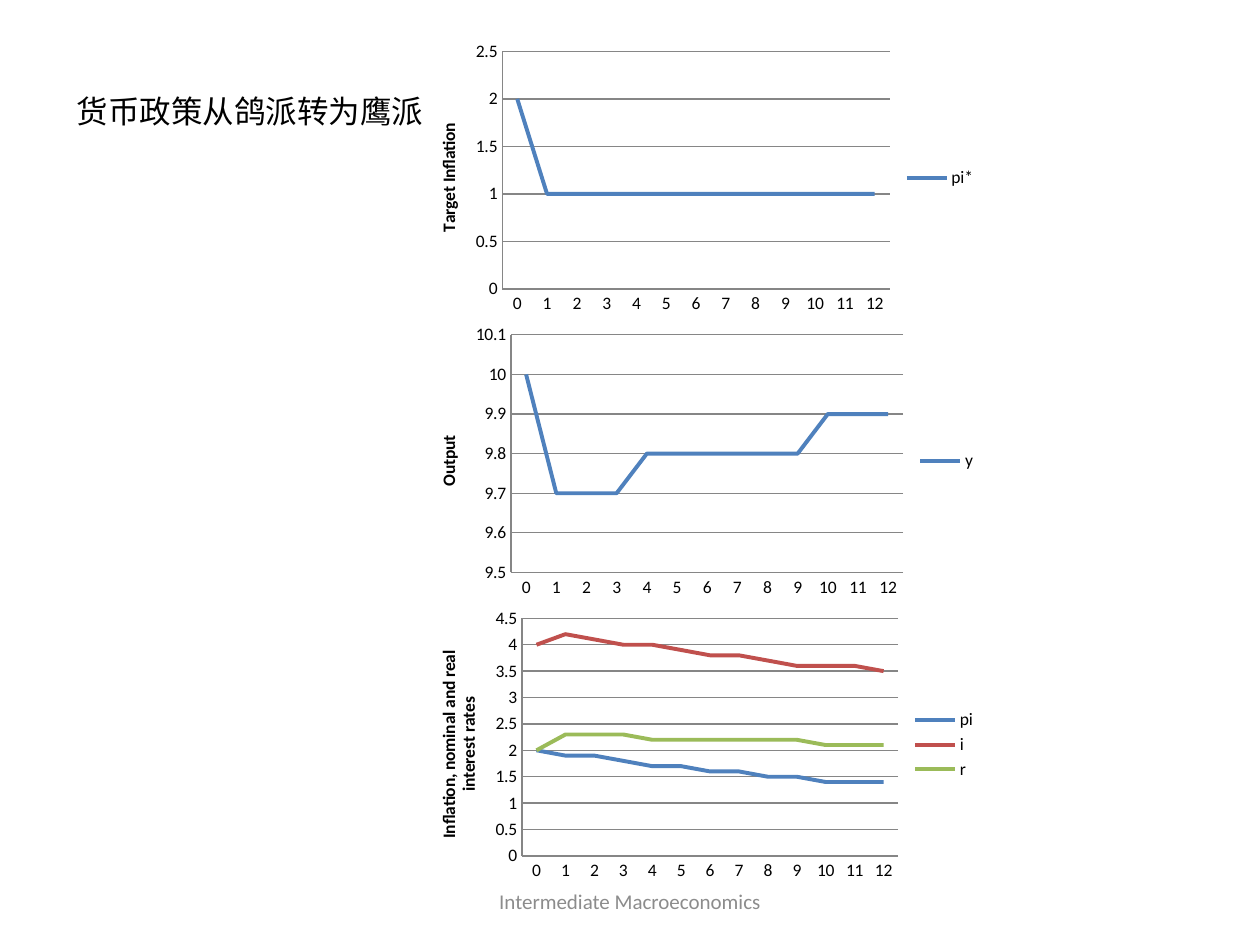
"""Build a slide of three line charts on a monetary policy turn."""
from dataclasses import dataclass

from pptx import Presentation
from pptx import util as u
from pptx.chart.data import CategoryChartData
from pptx.dml.color import RGBColor
from pptx.enum import chart as ch
from pptx.enum import text as tx
from pptx.slide import Slide


@dataclass(frozen=True)
class Theme:
    font: str = "Calibri"
    ink: str = "000000"
    muted: str = "8C8C8C"
    rule: str = "868686"
    blue: str = "4F81BD"
    red: str = "C0504D"
    green: str = "9BBB59"
    heading_size: float = 18
    footer_size: float = 12
    chart_size: float = 10
    curve_width: float = 2.25
    rule_width: float = 0.75


@dataclass(frozen=True)
class Curve:
    name: str
    color: str
    values: tuple[float, ...]


@dataclass(frozen=True)
class Panel:
    axis_title: str
    low: float
    high: float
    step: float
    curves: tuple[Curve, ...]


THEME = Theme()
PERIODS = range(13)
PANEL_LEFT, PANEL_TOP, PANEL_WIDTH, PANEL_HEIGHT = 235.25, 20.5, 330, 162

PANELS = (
    Panel("Target Inflation", 0, 2.5, 0.5, (
        Curve("pi*", THEME.blue, (2,) + (1,) * 12),
    )),
    Panel("Output", 9.5, 10.1, 0.1, (
        Curve("y", THEME.blue, (10, 9.7, 9.7, 9.7, 9.8, 9.8, 9.8,
                                9.8, 9.8, 9.8, 9.9, 9.9, 9.9)),
    )),
    Panel("Inflation, nominal and real interest rates", 0, 4.5, 0.5, (
        Curve("pi", THEME.blue, (2, 1.9, 1.9, 1.8, 1.7, 1.7, 1.6,
                                 1.6, 1.5, 1.5, 1.4, 1.4, 1.4)),
        Curve("i", THEME.red, (4, 4.2, 4.1, 4, 4, 3.9, 3.8,
                               3.8, 3.7, 3.6, 3.6, 3.6, 3.5)),
        Curve("r", THEME.green, (2, 2.3, 2.3, 2.3, 2.2, 2.2, 2.2,
                                 2.2, 2.2, 2.2, 2.1, 2.1, 2.1)),
    )),
)


def style_font(font, size: float, color: str, bold: bool = False) -> None:
    """Apply the theme typeface with a size, colour and weight."""
    font.name, font.size, font.bold = THEME.font, u.Pt(size), bold
    font.color.rgb = RGBColor.from_string(color)


def style_line(line, color: str, width: float) -> None:
    """Give a line its colour and width."""
    line.color.rgb = RGBColor.from_string(color)
    line.width = u.Pt(width)


def add_text(slide: Slide, words: str, *, left: float, top: float,
             width: float, height: float, size: float, color: str,
             align=tx.PP_ALIGN.LEFT, anchor=tx.MSO_ANCHOR.TOP) -> None:
    """Add one formatted line of text."""
    frame = slide.shapes.add_textbox(
        u.Pt(left), u.Pt(top), u.Pt(width), u.Pt(height)).text_frame
    frame.word_wrap = True
    frame.vertical_anchor = anchor
    paragraph = frame.paragraphs[0]
    paragraph.alignment = align
    run = paragraph.add_run()
    run.text = words
    style_font(run.font, size, color)


def add_panel(slide: Slide, panel: Panel, top: float) -> None:
    """Add one line chart with its titled value axis and legend."""
    data = CategoryChartData()
    data.categories = [str(period) for period in PERIODS]
    for curve in panel.curves:
        data.add_series(curve.name, curve.values)
    chart = slide.shapes.add_chart(
        ch.XL_CHART_TYPE.LINE, u.Pt(PANEL_LEFT), u.Pt(top),
        u.Pt(PANEL_WIDTH), u.Pt(PANEL_HEIGHT), data).chart
    style_font(chart.font, THEME.chart_size, THEME.ink)
    chart.has_title = False
    chart.has_legend = True
    chart.legend.position = ch.XL_LEGEND_POSITION.RIGHT
    chart.legend.include_in_layout = False

    plot = chart.plots[0]
    plot.vary_by_categories = False
    for series, curve in zip(plot.series, panel.curves):
        series.smooth = False
        series.marker.style = ch.XL_MARKER_STYLE.NONE
        style_line(series.format.line, curve.color, THEME.curve_width)

    levels = chart.value_axis
    for axis in (chart.category_axis, levels):
        axis.major_tick_mark = axis.minor_tick_mark = ch.XL_TICK_MARK.NONE
        style_line(axis.format.line, THEME.rule, THEME.rule_width)
    levels.minimum_scale, levels.maximum_scale = panel.low, panel.high
    levels.major_unit = panel.step
    levels.tick_labels.number_format = "General"
    levels.tick_labels.number_format_is_linked = False
    levels.has_major_gridlines = True
    style_line(levels.major_gridlines.format.line, THEME.rule, THEME.rule_width)
    title = levels.axis_title.text_frame
    title.text = panel.axis_title
    style_font(title.paragraphs[0].runs[0].font,
               THEME.chart_size, THEME.ink, bold=True)
    title._txBody.bodyPr.set("rot", "-5400000")
    title._txBody.bodyPr.set("vert", "horz")


def main() -> None:
    """Build and save the slide."""
    deck = Presentation()
    deck.slide_width, deck.slide_height = u.Pt(720), u.Pt(540)
    slide = deck.slides.add_slide(deck.slide_layouts[6])
    add_text(slide, "Intermediate Macroeconomics", left=246, top=500.5,
             width=228, height=28.75, size=THEME.footer_size,
             color=THEME.muted, align=tx.PP_ALIGN.CENTER,
             anchor=tx.MSO_ANCHOR.MIDDLE)
    for row, panel in enumerate(PANELS):
        add_panel(slide, panel, PANEL_TOP + row * PANEL_HEIGHT)
    add_text(slide, "货币政策从鸽派转为鹰派", left=36.75, top=49,
             width=215.5, height=29, size=THEME.heading_size, color=THEME.ink)
    deck.save("out.pptx")


if __name__ == "__main__":
    main()
